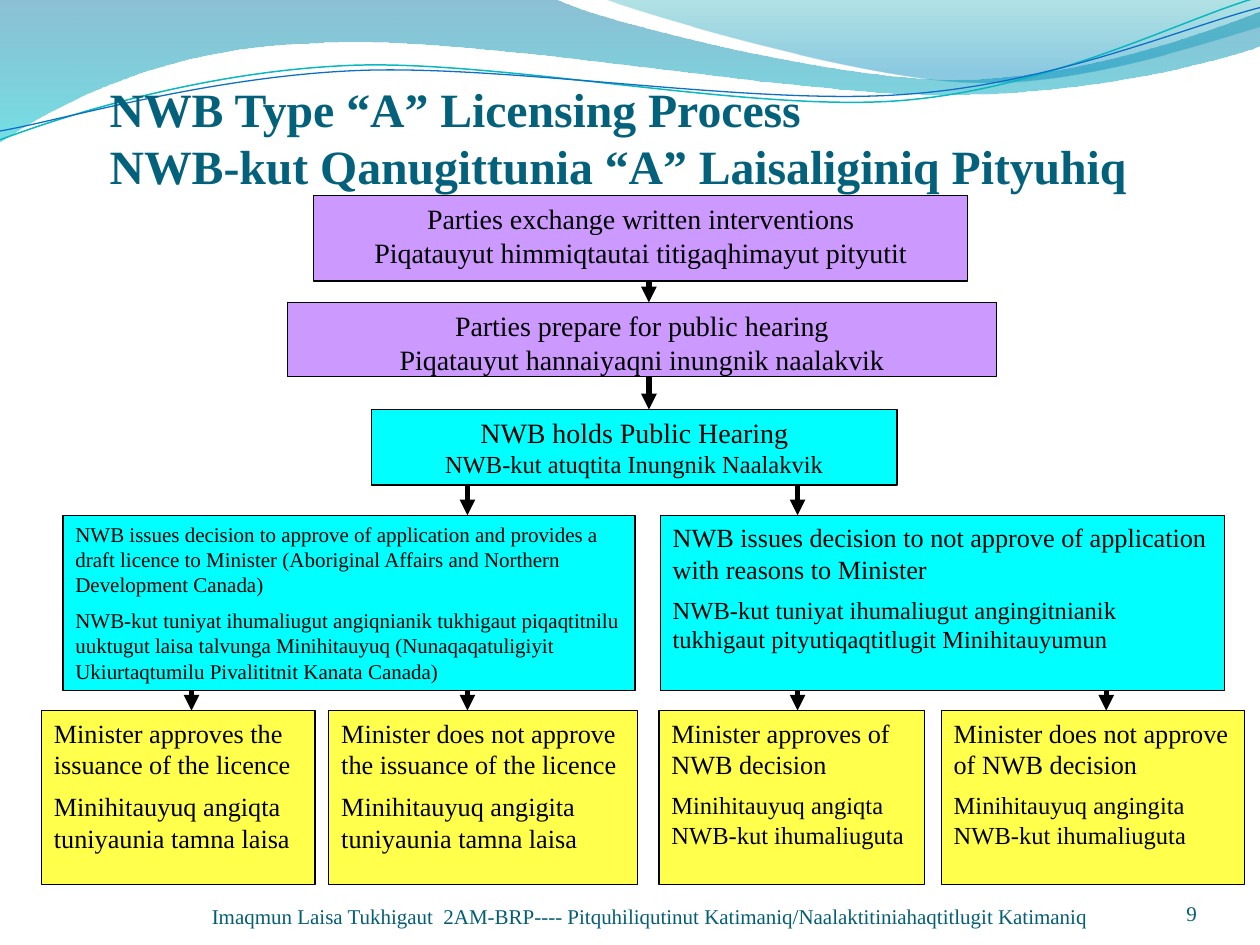
from math import cos, radians, sin

from lxml import etree
from pptx import Presentation
from pptx.dml.color import RGBColor
from pptx.enum.shapes import MSO_CONNECTOR, MSO_SHAPE
from pptx.enum.text import MSO_ANCHOR, MSO_AUTO_SIZE, PP_ALIGN
from pptx.oxml.ns import qn
from pptx.util import Inches, Pt

LEFT, CENTER, RIGHT = PP_ALIGN.LEFT, PP_ALIGN.CENTER, PP_ALIGN.RIGHT
TOP, BOTTOM = MSO_ANCHOR.TOP, MSO_ANCHOR.BOTTOM
FONT = "Times New Roman"
BLACK, PURPLE, CYAN, YELLOW = "000000", "CC99FF", "00FFFF", "FFFF00"
TITLE_COLOR, FOOTER_COLOR = "04617B", "045D75"

TITLE = ["NWB Type “A” Licensing Process",
         "NWB-kut Qanugittunia “A” Laisaliginiq Pityuhiq"]
FOOTER = ("Imaqmun Laisa Tukhigaut  2AM-BRP---- Pitquhiliqutinut "
          "Katimaniq/Naalaktitiniahaqtitlugit Katimaniq")
PAGE = "9"

STEPS = [
    {"top": 1.55, "height": 0.68, "fill": PURPLE, "align": CENTER, "after": 0, "boxes": [
        (2.49, 5.19, [("Parties exchange written interventions", 16),
                      ("Piqatauyut himmiqtautai titigaqhimayut pityutit", 16)])]},
    {"top": 2.4, "height": 0.59, "fill": PURPLE, "align": CENTER, "after": 0, "boxes": [
        (2.28, 5.63, [("Parties prepare for public hearing", 16),
                      ("Piqatauyut hannaiyaqni inungnik naalakvik", 16)])]},
    {"top": 3.25, "height": 0.6, "fill": CYAN, "align": CENTER, "after": 0, "boxes": [
        (2.95, 4.17, [("NWB holds Public Hearing", 16),
                      ("NWB-kut atuqtita Inungnik Naalakvik", 14)])]},
    {"top": 4.09, "height": 1.39, "fill": CYAN, "align": LEFT, "after": 6, "boxes": [
        (0.5, 4.54, [("NWB issues decision to approve of application and provides a draft "
                      "licence to Minister (Aboriginal Affairs and Northern Development "
                      "Canada)", 12),
                     ("NWB-kut tuniyat ihumaliugut angiqnianik tukhigaut piqaqtitnilu "
                      "uuktugut laisa talvunga Minihitauyuq (Nunaqaqatuligiyit "
                      "Ukiurtaqtumilu Pivalititnit Kanata Canada)", 12)]),
        (5.24, 4.48, [("NWB issues decision to not approve of application with reasons "
                       "to Minister", 15),
                      ("NWB-kut tuniyat ihumaliugut angingitnianik tukhigaut "
                       "pityutiqaqtitlugit Minihitauyumun", 14)])]},
    {"top": 5.64, "height": 1.38, "fill": YELLOW, "alpha": 70, "align": LEFT, "after": 6,
     "boxes": [
        (0.33, 2.17, [("Minister approves the issuance of the licence", 15),
                      ("Minihitauyuq angiqta tuniyaunia tamna laisa", 15)]),
        (2.61, 2.45, [("Minister does not approve the issuance of the licence", 15),
                      ("Minihitauyuq angigita tuniyaunia tamna laisa", 15)]),
        (5.23, 2.11, [("Minister approves of NWB decision", 15),
                      ("Minihitauyuq angiqta NWB-kut ihumaliuguta", 14)]),
        (7.47, 2.41, [("Minister does not approve of NWB decision", 15),
                      ("Minihitauyuq angingita NWB-kut ihumaliuguta", 14)])]},
]
ARROW_COLUMNS = [[5.15], [5.15], [3.71, 6.33], [1.52, 3.71, 6.33, 8.78]]

BANDS = [
    ((-0.01, -0.01, 10.02, 1.14),
     [[(0, 0)], [(4.4, -0.01)], [(4.76, 0.17), (6.64, 0.63), (7.58, 0.63)],
      [(8.53, 0.63), (9.58, 0.26), (10, 0.09)], [(10.01, 0.36)],
      [(9.83, 0.44), (8.7, 0.76), (7.46, 0.75)],
      [(6.22, 0.75), (3.82, 0.28), (2.57, 0.34)],
      [(1.29, 0.36), (0.46, 0.83), (-0.01, 1.13)], [(0, 0)]],
     [(0, "0074A1", 45), (1, "00C6CF", 55)]),
    ((4.79, -0.01, 5.21, 0.7),
     [[(4.79, -0.01)], [(5.09, 0.11), (6.82, 0.62), (7.69, 0.65)],
      [(8.56, 0.69), (9.61, 0.32), (10, 0.21)], [(10, 0)], [(4.79, -0.01)]],
     [(0, "00A1A9", 30), (0.8, "008BBF", 45)]),
]
WAVE_ANGLE = -2.7
WAVES = [
    ((-0.02, 0.22, 10.02, 0.71),
     [[(0, 1.11)], [(0.48, 0.93), (1.58, 0.57), (2.77, 0.52)],
      [(3.95, 0.47), (5.93, 0.89), (7.13, 0.8)],
      [(8.33, 0.71), (9.38, 0.15), (9.98, -0.02)]], "0AB8BF", 0.85),
    ((-0.02, 0.3, 10.03, 0.58),
     [[(0, 1.04)], [(0.47, 0.96), (1.64, 0.61), (2.83, 0.56)],
      [(4.03, 0.51), (5.97, 0.84), (7.17, 0.75)],
      [(8.36, 0.67), (9.41, 0.21), (10, 0.06)]], "0F6FC6", 0.75),
]


def rgb(value):
    return RGBColor.from_string(value)


def place(shape, box):
    shape.left, shape.top, shape.width, shape.height = [Inches(v) for v in box]


def set_alphas(shape, alphas):
    for color, alpha in zip(shape._element.spPr.iter(qn("a:srgbClr")), alphas):
        etree.SubElement(color, qn("a:alpha")).set("val", str(alpha * 1000))


def add_outline(box, segments, close, angle=0):
    left, top, width, height = box
    turn = radians(-angle)

    def local(point):
        dx, dy = point[0] - left - width / 2, point[1] - top - height / 2
        return (Inches(width / 2 + dx * cos(turn) - dy * sin(turn)),
                Inches(height / 2 + dx * sin(turn) + dy * cos(turn)))

    curves = [[local(point) for point in segment] for segment in segments]
    ends = [curve[-1] for curve in curves]
    builder = slide.shapes.build_freeform(*ends[0])
    builder.add_line_segments(ends[1:], close=close)
    outline = builder.convert_to_shape()
    outline.shadow.inherit = False
    place(outline, box)
    outline.rotation = angle

    route = outline._element.spPr.find(".//" + qn("a:path"))
    route.set("w", str(Inches(width)))
    route.set("h", str(Inches(height)))
    for command, curve in zip(list(route), curves):
        if len(curve) == 3:
            command.tag = qn("a:lnTo")
            bezier = etree.Element(qn("a:cubicBezTo"))
            route.replace(command, bezier)
            command = bezier
        for point in list(command):
            command.remove(point)
        for x, y in curve:
            point = etree.SubElement(command, qn("a:pt"))
            point.set("x", str(x))
            point.set("y", str(y))
    return outline


def add_run(paragraph, text, size, color, bold=False):
    run = paragraph.add_run()
    run.text = text
    run.font.name, run.font.size, run.font.bold = FONT, Pt(size), bold
    run.font.color.rgb = rgb(color)


def set_frame(frame, anchor, insets):
    frame.word_wrap = True
    frame.auto_size = MSO_AUTO_SIZE.NONE
    frame.vertical_anchor = anchor
    (frame.margin_left, frame.margin_top,
     frame.margin_right, frame.margin_bottom) = [Inches(inset) for inset in insets]


def add_step_box(step, left, width, paragraphs):
    box = slide.shapes.add_shape(MSO_SHAPE.RECTANGLE, Inches(left), Inches(step["top"]),
                                 Inches(width), Inches(step["height"]))
    box.shadow.inherit = False
    box.fill.solid()
    box.fill.fore_color.rgb = rgb(step["fill"])
    if "alpha" in step:
        set_alphas(box, [step["alpha"]])
    box.line.color.rgb = rgb(BLACK)
    box.line.width = Pt(0.75)
    set_frame(box.text_frame, TOP, (0.1, 0.05, 0.1, 0.05))
    for index, (text, size) in enumerate(paragraphs):
        paragraph = box.text_frame.add_paragraph() if index else box.text_frame.paragraphs[0]
        paragraph.alignment = step["align"]
        paragraph.space_after = Pt(step["after"])
        add_run(paragraph, text, size, BLACK)


def add_arrow(x, start, end):
    arrow = slide.shapes.add_connector(MSO_CONNECTOR.STRAIGHT, Inches(x), Inches(start),
                                       Inches(x), Inches(end))
    arrow.line.color.rgb = rgb(BLACK)
    arrow.line.width = Pt(3)
    properties = arrow._element.spPr
    etree.SubElement(properties.find(qn("a:ln")), qn("a:tailEnd")).set("type", "triangle")
    etree.SubElement(properties, qn("a:effectLst"))


def add_footer(text, box, align):
    footer = slide.shapes.add_textbox(*[Inches(v) for v in box])
    set_frame(footer.text_frame, BOTTOM, (0, 0, 0, 0))
    paragraph = footer.text_frame.paragraphs[0]
    paragraph.alignment = align
    add_run(paragraph, text, 12, FOOTER_COLOR)


prs = Presentation()
prs.slide_width, prs.slide_height = Inches(10), Inches(7.5)
slide = prs.slides.add_slide(prs.slide_layouts[5])

for box, segments, stops in BANDS:
    band = add_outline(box, segments, True)
    band.fill.gradient()
    band.fill.gradient_angle = 270
    for stop, (position, color, _) in zip(band.fill.gradient_stops, stops):
        stop.position = position
        stop.color.rgb = rgb(color)
    set_alphas(band, [alpha for _, _, alpha in stops])
    band.line.fill.background()

for box, segments, color, weight in WAVES:
    wave = add_outline(box, segments, False, WAVE_ANGLE)
    wave.fill.background()
    wave.line.color.rgb = rgb(color)
    wave.line.width = Pt(weight)

for step in STEPS:
    for left, width, paragraphs in step["boxes"]:
        add_step_box(step, left, width, paragraphs)

for upper, lower, columns in zip(STEPS, STEPS[1:], ARROW_COLUMNS):
    for x in columns:
        add_arrow(x, upper["top"] + upper["height"], lower["top"])

title = slide.shapes.title
place(title, (0.87, 0.29, 8.89, 1.25))
set_frame(title.text_frame, BOTTOM, (0, 0.05, 0, 0))
heading = title.text_frame.paragraphs[0]
heading.alignment = LEFT
for index, line in enumerate(TITLE):
    if index:
        heading.add_line_break()
    add_run(heading, line, 27.3, TITLE_COLOR, True)
slide.shapes._spTree.append(title._element)

add_footer(PAGE, (8.67, 6.95, 0.83, 0.4), RIGHT)
add_footer(FOOTER, (1.38, 6.9, 7.56, 0.47), CENTER)

prs.save("out.pptx")
